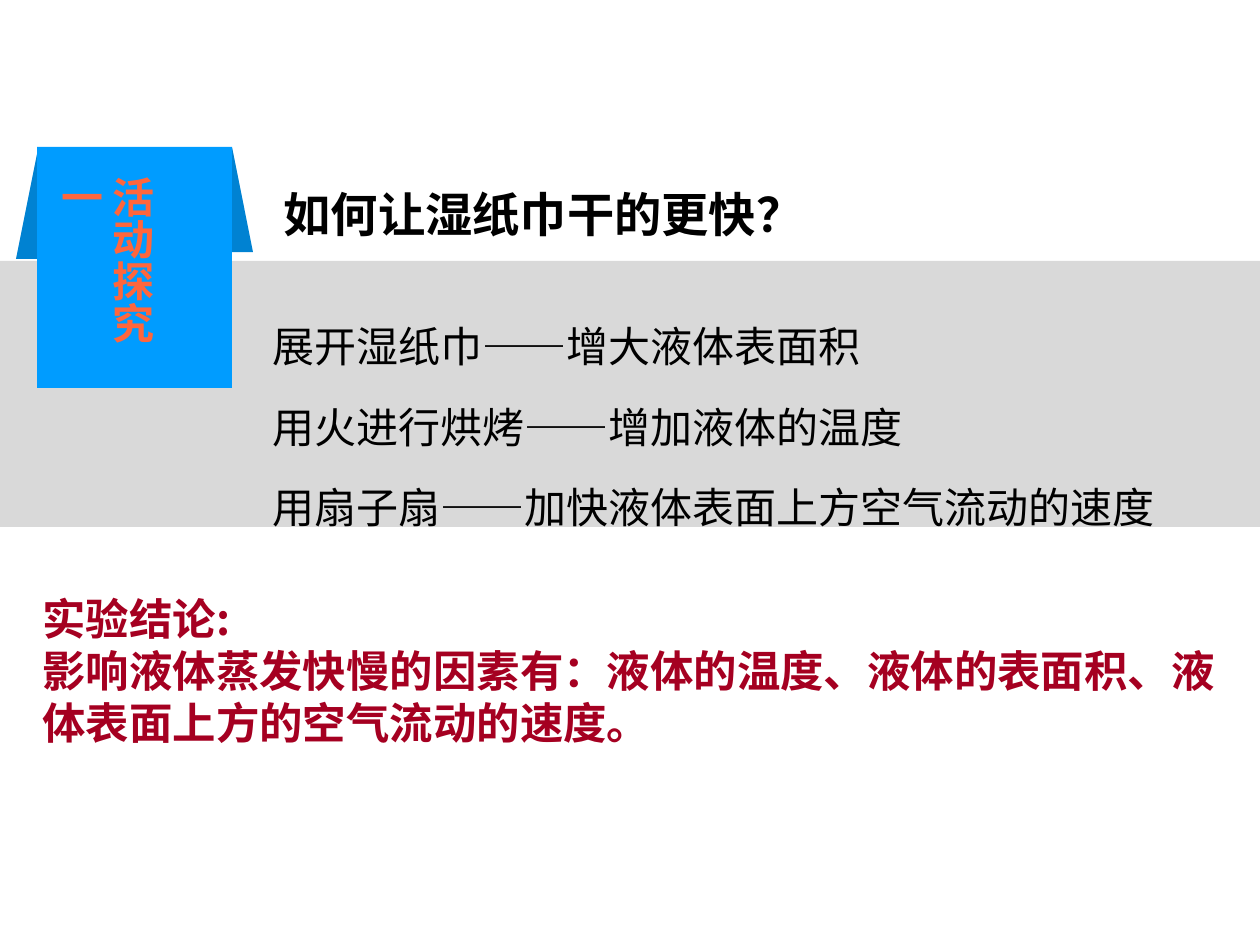
"""Build the slide about how to dry a wet tissue faster."""
from pptx import Presentation
from pptx.dml.color import RGBColor
from pptx.enum.shapes import MSO_SHAPE
from pptx.enum.text import MSO_ANCHOR, MSO_AUTO_SIZE, PP_ALIGN
from pptx.util import Pt

RECTANGLE = MSO_SHAPE.RECTANGLE
RIGHT_TRIANGLE = MSO_SHAPE.RIGHT_TRIANGLE
TOP = MSO_ANCHOR.TOP
MIDDLE = MSO_ANCHOR.MIDDLE
LEFT = PP_ALIGN.LEFT
GROW = MSO_AUTO_SIZE.SHAPE_TO_FIT_TEXT

EMU_PER_PX = 914400 / 126
GRAY = RGBColor(0xD9, 0xD9, 0xD9)
BLUE = RGBColor(0x00, 0x9C, 0xFF)
DARK_BLUE = RGBColor(0x00, 0x82, 0xD2)
ORANGE = RGBColor(0xFF, 0x66, 0x3C)
CRIMSON = RGBColor(0xA5, 0x00, 0x21)
BLACK = RGBColor(0x00, 0x00, 0x00)

QUESTION = "如何让湿纸巾干的更快？"
METHODS = [
    "展开湿纸巾——增大液体表面积",
    "用火进行烘烤——增加液体的温度",
    "用扇子扇——加快液体表面上方空气流动的速度",
]
CONCLUSION = [
    "实验结论:",
    "影响液体蒸发快慢的因素有：液体的温度、液体的表面积、液体表面上方的空气流动的速度。",
]


def px(*lengths):
    """Turn pixel lengths into EMU."""
    return [round(length * EMU_PER_PX) for length in lengths]


class SlideBuilder:
    """Hold the text style and the current slide."""

    font = "Arial"

    def __init__(self, slide):
        self.slide = slide

    def block(self, kind, box, color, flip=False):
        """Add a filled shape without an outline."""
        shape = self.slide.shapes.add_shape(kind, *px(*box))
        shape.shadow.inherit = False
        shape.fill.solid()
        shape.fill.fore_color.rgb = color
        shape.line.fill.background()
        if flip:
            shape.element.spPr.get_or_add_xfrm().set("flipH", "1")

    def fill_text(self, shape, lines, size, color, bold=False, font=None,
                  spacing=None, anchor=TOP, wrap=True):
        """Fill a shape with left-aligned paragraphs in one style."""
        frame = shape.text_frame
        frame.text = "\n".join(lines)
        frame.word_wrap = wrap
        frame.auto_size = GROW
        frame.vertical_anchor = anchor
        for paragraph in frame.paragraphs:
            paragraph.alignment = LEFT
            paragraph.space_before = Pt(0)
            paragraph.line_spacing = spacing
            paragraph.font.name = font or self.font
            paragraph.font.size = Pt(size)
            paragraph.font.bold = bold
            paragraph.font.color.rgb = color

    def text(self, box, lines, size, color, vertical=False, **style):
        """Add a text box, optionally with vertical writing."""
        shape = self.slide.shapes.add_textbox(*px(*box))
        self.fill_text(shape, lines, size, color, **style)
        if vertical:
            shape.text_frame._txBody.bodyPr.set("vert", "eaVert")

    def placeholder(self, index, box, lines, size, color, **style):
        """Move a placeholder to the front and fill it without bullets."""
        shape = self.slide.placeholders[index]
        shape.left, shape.top, shape.width, shape.height = px(*box)
        shape.element.getparent().append(shape.element)
        self.fill_text(shape, lines, size, color, **style)
        for paragraph in shape.text_frame.paragraphs:
            properties = paragraph._p.get_or_add_pPr()
            properties.set("marL", "0")
            properties.set("indent", "0")
            bullet = properties.makeelement(
                "{http://schemas.openxmlformats.org/drawingml/2006/main}buNone")
            properties.insert_element_before(
                bullet, "a:tabLst", "a:defRPr", "a:extLst")


def main():
    """Build and save the presentation."""
    presentation = Presentation()
    presentation.slide_width, presentation.slide_height = px(1260, 945)
    slide = presentation.slides.add_slide(presentation.slide_layouts[1])
    builder = SlideBuilder(slide)

    builder.block(RECTANGLE, (0, 261, 1260, 266), GRAY)
    builder.block(RECTANGLE, (37, 147, 195, 241), BLUE)
    builder.block(RIGHT_TRIANGLE, (232, 147, 21, 105), DARK_BLUE)
    builder.block(RIGHT_TRIANGLE, (16, 154, 21, 105), DARK_BLUE, flip=True)

    builder.text((86, 164, 77, 228), ["活动探究一"], 24, ORANGE,
                 vertical=True, bold=True)
    builder.text((30, 585, 1201, 170), CONCLUSION, 24.8, CRIMSON,
                 bold=True, font="Noto Sans CJK SC", anchor=MIDDLE)
    builder.placeholder(0, (271, 179, 553, 71), [QUESTION], 27, BLACK,
                        bold=True, wrap=False)
    builder.placeholder(1, (260, 284, 1000, 257), METHODS, 24, BLACK,
                        spacing=1.6)

    presentation.save("out.pptx")


if __name__ == "__main__":
    main()
